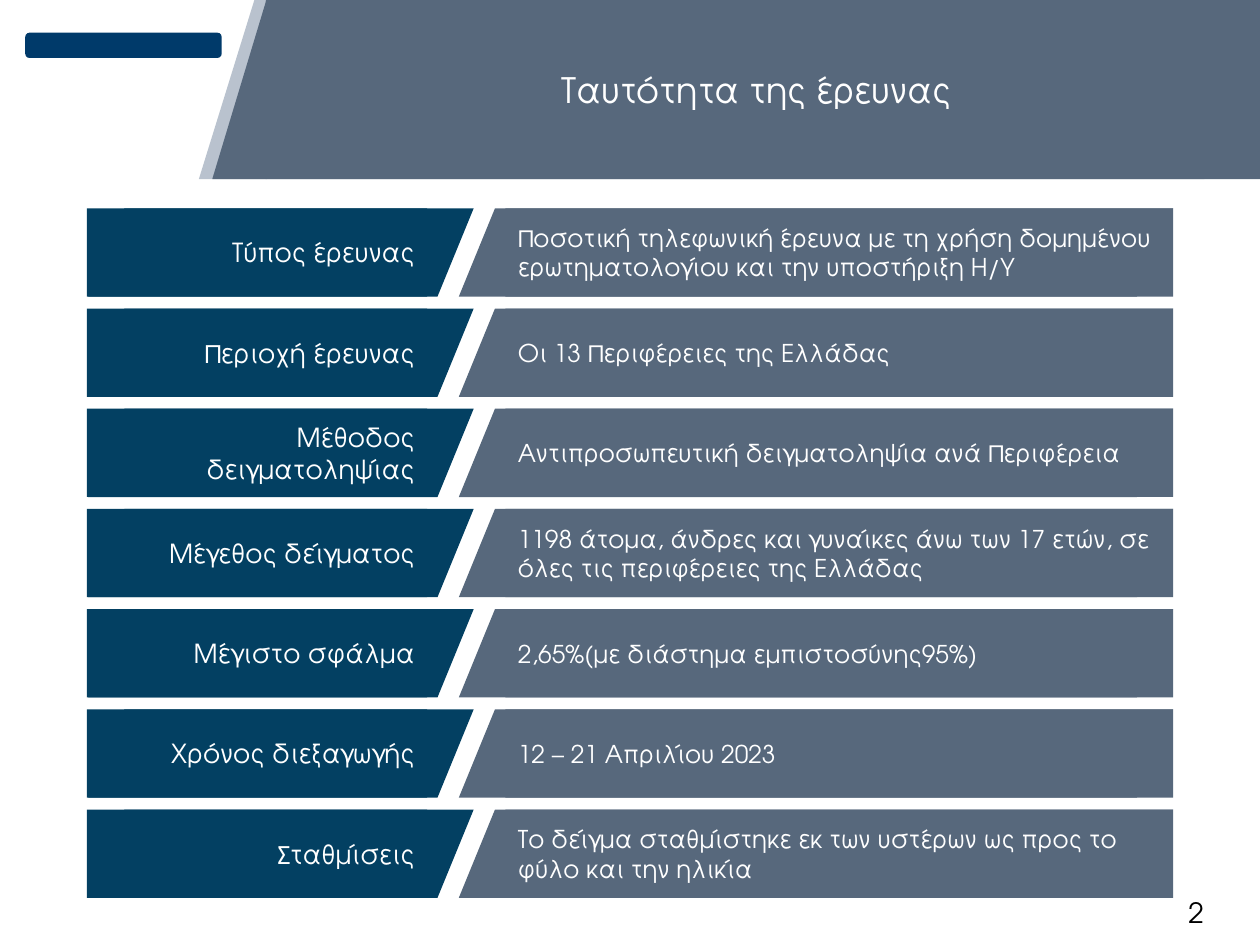
import pptx
import pptx.dml.color
import pptx.enum.shapes
import pptx.enum.text
import pptx.util

Cm = pptx.util.Cm
SHAPES = pptx.enum.shapes.MSO_SHAPE
ALIGN = pptx.enum.text.PP_ALIGN
COLOURS = {
    "navy": "034062",
    "slate": "57687C",
    "mist": "B9C2CE",
    "emblem": "003A6A",
    "white": "FFFFFF",
    "black": "000000",
}
FACTS = [
    ("Τύπος έρευνας", "Ποσοτική τηλεφωνική έρευνα με τη χρήση δομημένου ερωτηματολογίου και την υποστήριξη Η/Υ"),
    ("Περιοχή έρευνας", "Οι 13 Περιφέρειες της Ελλάδας"),
    ("Μέθοδος δειγματοληψίας", "Αντιπροσωπευτική δειγματοληψία ανά Περιφέρεια"),
    ("Μέγεθος δείγματος", "1198 άτομα, άνδρες και γυναίκες άνω των 17 ετών, σε όλες τις περιφέρειες της Ελλάδας"),
    ("Μέγιστο σφάλμα", "2,65%(με διάστημα εμπιστοσύνης95%)"),
    ("Χρόνος διεξαγωγής", "12 – 21 Απριλίου 2023"),
    ("Σταθμίσεις", "Το δείγμα σταθμίστηκε εκ των υστέρων ως προς το φύλο και την ηλικία"),
]
ROW_TOP, ROW_STEP, ROW_HEIGHT = 4.2, 2.02, 1.78
BANNER_HEIGHT = 3.61


def colour(name):
    """Return the named palette colour."""
    return pptx.dml.color.RGBColor.from_string(COLOURS[name])


def write(box, text, size, align=ALIGN.LEFT, ink="white", font="TeX Gyre Adventor"):
    """Write one vertically centred paragraph into a box."""
    frame = box.text_frame
    frame.word_wrap = True
    frame.auto_size = pptx.enum.text.MSO_AUTO_SIZE.NONE
    frame.vertical_anchor = pptx.enum.text.MSO_ANCHOR.MIDDLE
    para = frame.paragraphs[0]
    para.alignment = align
    span = para.add_run()
    span.text = text
    span.font.name = font
    span.font.size = pptx.util.Pt(size)
    span.font.color.rgb = colour(ink)


class SlideBuilder:
    """Hold the current slide and draw its elements in one style."""

    def __init__(self, page):
        """Remember the slide to draw on."""
        self.page = page

    def shape(self, kind, left, top, width, height, fill, slant=None, turn=0):
        """Add a flat filled shape without outline or shadow."""
        box = self.page.shapes.add_shape(kind, Cm(left), Cm(top), Cm(width), Cm(height))
        box.shadow.inherit = False
        box.fill.solid()
        box.fill.fore_color.rgb = colour(fill)
        box.line.fill.background()
        box.rotation = turn
        if slant is not None:
            box.adjustments[0] = slant
        return box

    def title(self, text):
        """Turn the title placeholder into the banner, above the shapes so far."""
        box = self.page.shapes.title
        box.left, box.top, box.width, box.height = Cm(5.36), Cm(0), Cm(20.04), Cm(BANNER_HEIGHT)
        box.fill.solid()
        box.fill.fore_color.rgb = colour("slate")
        write(box, text, 20, align=ALIGN.CENTER)
        box.text_frame.margin_right = Cm(0.51)
        self.page.shapes._spTree.append(box._element)

    def banner(self, text):
        """Add the slanted header with its title."""
        self.shape(SHAPES.PARALLELOGRAM, 4.01, 0, 21.39, BANNER_HEIGHT, "mist", slant=0.31)
        self.title(text)
        self.shape(SHAPES.RIGHT_TRIANGLE, 3.02, 1.26, BANNER_HEIGHT, 1.09, "slate", turn=270)

    def fact(self, top, label, detail):
        """Add one row: a label and its detail, parted by a slanted gap."""
        self.shape(SHAPES.PARALLELOGRAM, 1.78, top, 7.77, ROW_HEIGHT, "navy", slant=0.41)
        self.shape(SHAPES.PARALLELOGRAM, 9.25, top, 14.4, ROW_HEIGHT, "slate", slant=0.41)
        label_box = self.shape(SHAPES.RECTANGLE, 1.75, top, 6.86, ROW_HEIGHT, "navy")
        write(label_box, label, 15, align=ALIGN.RIGHT)
        detail_box = self.shape(SHAPES.RECTANGLE, 10.19, top, 13.46, ROW_HEIGHT, "slate")
        write(detail_box, detail, 14)

    def page_number(self, text):
        """Add the page number in the bottom right corner."""
        box = self.page.shapes.add_textbox(Cm(22.83), Cm(17.73), Cm(2.57), Cm(1.32))
        write(box, text, 16, align=ALIGN.CENTER, ink="black")


def main():
    """Build the survey identity slide."""
    deck = pptx.Presentation()
    deck.slide_width, deck.slide_height = Cm(25.4), Cm(19.05)
    builder = SlideBuilder(deck.slides.add_slide(deck.slide_layouts.get_by_name("Title Only")))
    builder.shape(SHAPES.ROUNDED_RECTANGLE, 0.51, 0.66, 3.96, 0.51, "emblem")
    builder.banner("Ταυτότητα της έρευνας")
    builder.page_number("2")
    for row, (label, detail) in enumerate(FACTS):
        builder.fact(ROW_TOP + row * ROW_STEP, label, detail)
    deck.save("out.pptx")


if __name__ == "__main__":
    main()
